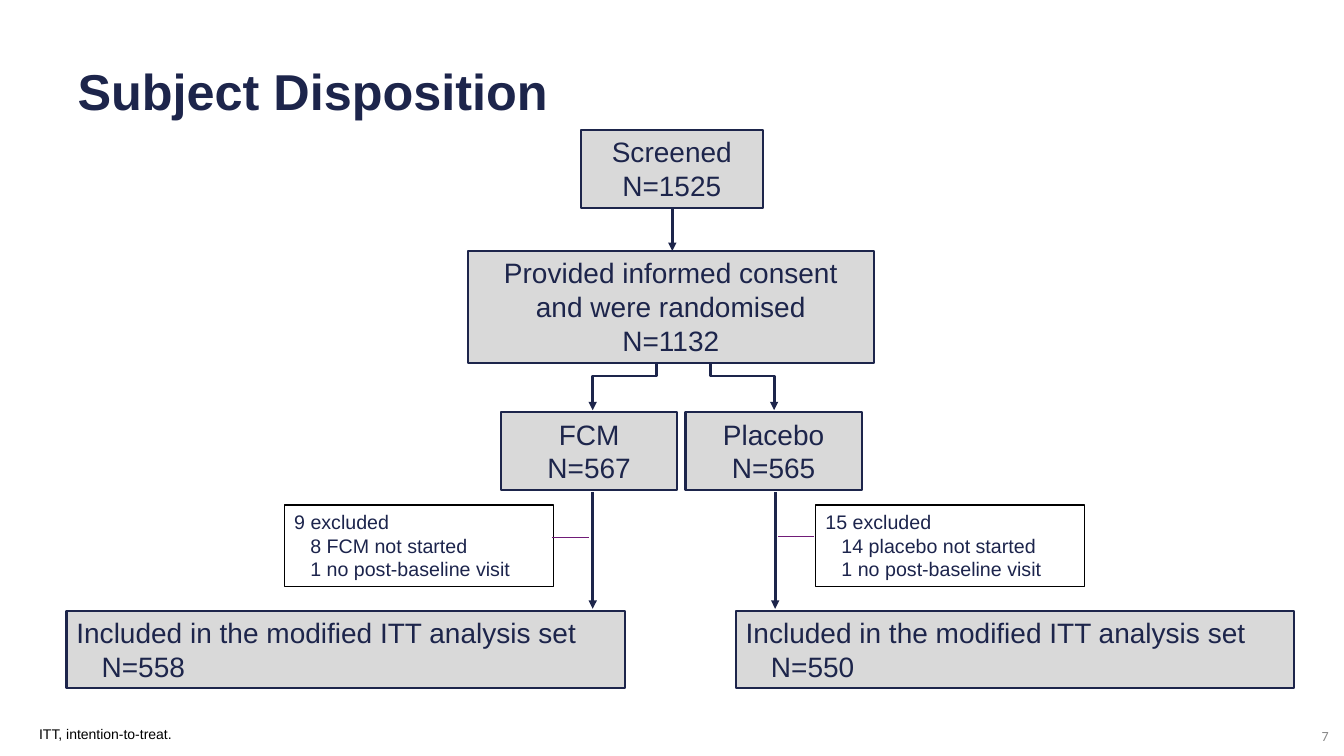
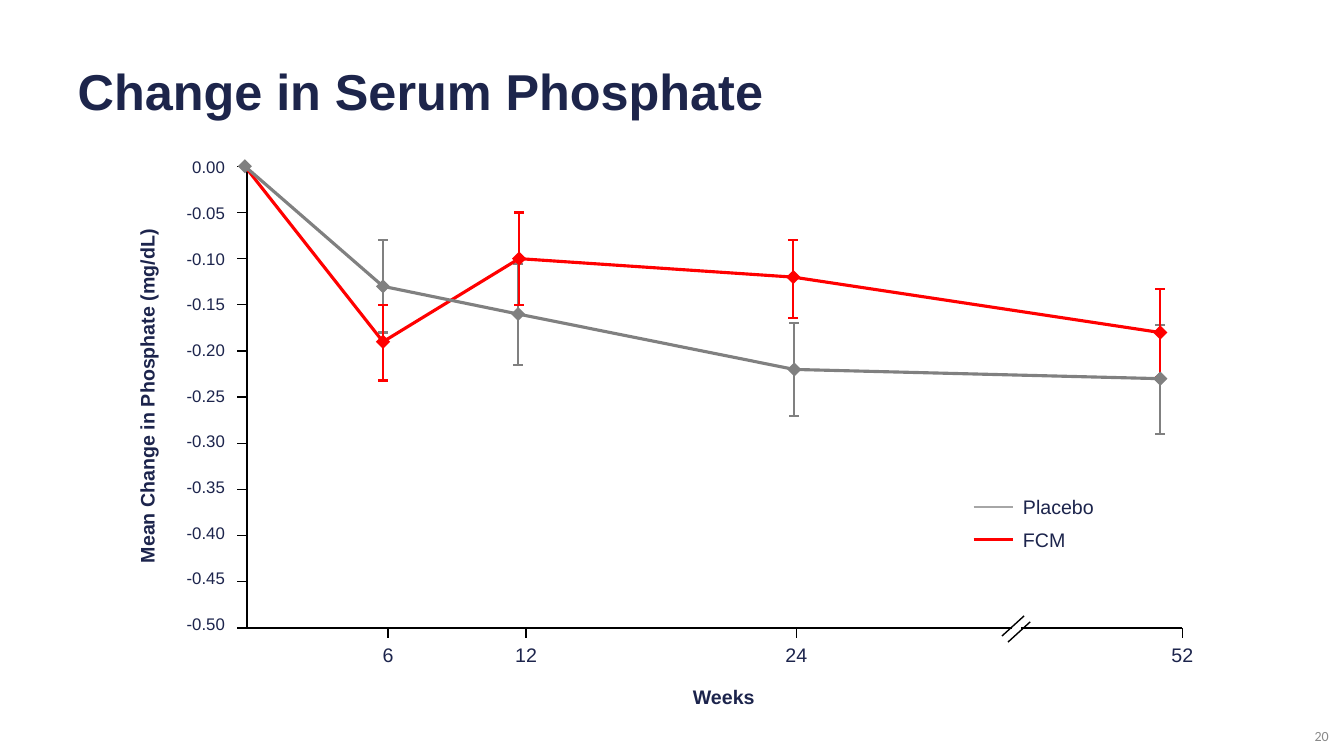
from dataclasses import dataclass

from lxml import etree
from pptx import Presentation
from pptx import util as u
from pptx.dml.color import RGBColor
from pptx.enum import shapes, text
from pptx.oxml.ns import qn

# The slide is a grid of square cells, 0.1 inch each; all places are in cells.
CELL = u.Inches(0.1)
COLUMNS, ROWS = 133.33, 75

NAVY, INK, BLACK, WHITE = "1D254B", "1C244C", "000000", "FFFFFF"
PANEL, PURPLE, MUTED = "D9D9D9", "701C77", "898989"
GREY, LIGHT_GREY, RED = "808080", "A6A6A6", "FF0000"

LEFT, CENTER, RIGHT = text.PP_ALIGN.LEFT, text.PP_ALIGN.CENTER, text.PP_ALIGN.RIGHT
TOP, MIDDLE, BOTTOM = text.MSO_ANCHOR.TOP, text.MSO_ANCHOR.MIDDLE, text.MSO_ANCHOR.BOTTOM
RECTANGLE, DIAMOND = shapes.MSO_SHAPE.RECTANGLE, shapes.MSO_SHAPE.DIAMOND

Point = tuple[float, float]


@dataclass(frozen=True)
class Area:
    left: float
    top: float
    width: float
    height: float

    def emu(self) -> list[int]:
        return [cells(n) for n in (self.left, self.top, self.width, self.height)]


@dataclass(frozen=True)
class FlowBox:
    words: str
    area: Area
    align: int = CENTER
    indent: float = 0
    size: float = 20
    color: str = NAVY
    fill: str | None = PANEL
    line: str = NAVY
    line_width: float = 1.5


@dataclass(frozen=True)
class Arrow:
    points: list[Point]


@dataclass(frozen=True)
class Reading:
    """Mean with its error limits, in hundredths of mg/dL, at a column."""
    column: float
    mean: float
    high: float
    low: float


@dataclass(frozen=True)
class Series:
    name: str
    color: str
    legend_color: str
    legend_row: float
    readings: list[Reading]


def cells(count: float) -> int:
    return round(count * CELL)


def rgb(color: str) -> RGBColor:
    return RGBColor.from_string(color)


def write(frame, words: str, *, size: float, color: str, font: str = "Arial",
          bold: bool = False, align=LEFT, anchor=TOP, indent: float = 0) -> None:
    """Fill a text frame; indent moves every paragraph after the first."""
    frame.word_wrap = True
    frame.vertical_anchor = anchor
    for index, line in enumerate(words.split("\n")):
        para = frame.add_paragraph() if index else frame.paragraphs[0]
        para.text = line
        para.alignment = align
        if index and indent:
            para._p.get_or_add_pPr().set("marL", str(cells(indent)))
        for span in para.runs:
            span.font.name, span.font.size = font, u.Pt(size)
            span.font.bold, span.font.color.rgb = bold, rgb(color)


def add_text(page, words: str, area: Area, *, rotation: float = 0, **style) -> None:
    box = page.shapes.add_textbox(*area.emu())
    box.rotation = rotation
    write(box.text_frame, words, **style)


def add_shape(page, kind, area: Area, fill: str | None, line: str | None = None,
              line_width: float = 1):
    shape = page.shapes.add_shape(kind, *area.emu())
    shape.shadow.inherit = False
    if fill:
        shape.fill.solid()
        shape.fill.fore_color.rgb = rgb(fill)
    else:
        shape.fill.background()
    if line:
        shape.line.color.rgb = rgb(line)
        shape.line.width = u.Pt(line_width)
    else:
        shape.line.fill.background()
    return shape


def add_path(page, points: list[Point], color: str, width: float, arrow: bool = False) -> None:
    """Draw a connector through two points, or an open outline through more."""
    corners = [(cells(x), cells(y)) for x, y in points]
    if len(corners) == 2:
        path = page.shapes.add_connector(shapes.MSO_CONNECTOR.STRAIGHT, *corners[0], *corners[1])
    else:
        builder = page.shapes.build_freeform(*corners[0], scale=1.0)
        builder.add_line_segments(corners[1:], close=False)
        path = builder.convert_to_shape()
        path.fill.background()
    path.line.color.rgb = rgb(color)
    path.line.width = u.Pt(width)
    if arrow:
        etree.SubElement(path.line._get_or_add_ln(), qn("a:tailEnd"), type="triangle")
    etree.SubElement(path._element.spPr, qn("a:effectLst"))


def add_page(deck, title: str, number: int):
    page = deck.slides.add_slide(deck.slide_layouts[5])
    heading = page.shapes.title
    heading.left, heading.top, heading.width, heading.height = Area(6.7, 5.2, 120, 7.5).emu()
    write(heading.text_frame, title, size=36, color=NAVY, bold=True, anchor=MIDDLE)
    add_text(page, str(number), Area(120.5, 71.8, 12.3, 2.5), size=10, color=MUTED,
             font="Calibri", align=RIGHT, anchor=MIDDLE)
    return page


# Subject disposition
def included(left: float, count: int) -> FlowBox:
    return FlowBox(f"Included in the modified ITT analysis set\nN={count}",
                   Area(left, 60.6, 55.4, 7.7), align=LEFT, indent=2.5)


def excluded(left: float, words: str) -> FlowBox:
    return FlowBox(words, Area(left, 50.1, 26.7, 8.1), align=LEFT, indent=1.6, size=14,
                   color=INK, fill=None, line=BLACK, line_width=0.75)


FLOW_BOXES = [
    FlowBox("Screened\vN=1525", Area(57.6, 12.9, 18.1, 7.7)),
    FlowBox("Provided informed consent and were randomised\vN=1132", Area(46.4, 24.9, 40.3, 11.1)),
    FlowBox("FCM\vN=567", Area(49.7, 40.9, 17.5, 7.7)),
    FlowBox("Placebo\vN=565", Area(68, 40.9, 17.5, 7.7)),
    included(6.6, 558),
    included(73, 550),
    excluded(28.2, "9 excluded\n8 FCM not started\n1 no post-baseline visit"),
    excluded(80.9, "15 excluded\n14 placebo not started\n1 no post-baseline visit"),
]
ARROWS = [
    Arrow([(66.7, 20.7), (66.7, 24.9)]),
    Arrow([(65.1, 34), (65.1, 37.3), (58.8, 37.3), (58.8, 40.7)]),
    Arrow([(70.5, 34), (70.5, 37.3), (76.8, 37.3), (76.8, 40.7)]),
    Arrow([(58.8, 48.8), (58.8, 60.4)]),
    Arrow([(76.9, 48.8), (76.9, 60.4)]),
]


def build_disposition(deck) -> None:
    page = add_page(deck, "Subject Disposition", 7)
    for arrow in ARROWS:
        add_path(page, arrow.points, NAVY, 2, arrow=True)
    for item in FLOW_BOXES:
        box = add_shape(page, RECTANGLE, item.area, item.fill, item.line, item.line_width)
        write(box.text_frame, item.words, size=item.size, color=item.color,
              align=item.align, anchor=TOP, indent=item.indent)
    for left, row in ((54.8, 53.3), (77.2, 53.2)):
        add_path(page, [(left, row), (left + 3.6, row)], PURPLE, 0.75)
    add_text(page, "ITT, intention-to-treat.", Area(2.9, 71.4, 82.4, 2.7), size=10,
             color=BLACK, anchor=BOTTOM)


# Change in serum phosphate
AXIS_LEFT, AXIS_RIGHT, AXIS_TOP, AXIS_BOTTOM = 24.5, 117.3, 16.5, 62.3
STEPS = 10
TICK, MARKER = 1, 1.4
WEEKS = {6: 38.5, 12: 52.2, 24: 79, 52: 117.3}
ORIGIN = Reading(24.3, 0, 0, 0)
SERIES = [
    Series("Placebo", GREY, LIGHT_GREY, 50.3, [
        Reading(38, -13, -8, -18), Reading(51.4, -16, -10.6, -21.5),
        Reading(78.8, -22, -17, -27), Reading(115.1, -23, -17.2, -29)]),
    Series("FCM", RED, RED, 53.5, [
        Reading(38, -19, -15, -23.2), Reading(51.5, -10, -5, -15),
        Reading(78.7, -12, -8, -16.4), Reading(115.1, -18, -13.3, -22.8)]),
]


def value_row(value: float) -> float:
    return AXIS_TOP - value / 50 * (AXIS_BOTTOM - AXIS_TOP)


def add_marker(page, reading: Reading, color: str) -> None:
    area = Area(reading.column - MARKER / 2, value_row(reading.mean) - MARKER / 2, MARKER, MARKER)
    add_shape(page, DIAMOND, area, color)


def add_error_bar(page, reading: Reading, color: str) -> None:
    ends = [value_row(reading.high), value_row(reading.low)]
    add_path(page, [(reading.column, row) for row in ends], color, 1.5)
    for row in ends:
        add_path(page, [(reading.column - TICK / 2, row), (reading.column + TICK / 2, row)],
                 color, 1.5)


def add_axes(page) -> None:
    add_path(page, [(AXIS_LEFT, AXIS_TOP), (AXIS_LEFT, AXIS_BOTTOM), (AXIS_RIGHT, AXIS_BOTTOM)],
             BLACK, 1)
    for step in range(STEPS + 1):
        value = -5 * step
        row = value_row(value)
        add_path(page, [(AXIS_LEFT, row), (AXIS_LEFT - TICK, row)], BLACK, 1)
        add_text(page, f"{value / 100:.2f}", Area(13.6, 15.1 + 4.53 * step, 9.7, 3),
                 size=12, color=INK, align=RIGHT)
    for week, column in WEEKS.items():
        add_path(page, [(column, AXIS_BOTTOM), (column, AXIS_BOTTOM + TICK)], BLACK, 1)
        add_text(page, str(week), Area(column - 3, 63.3, 6, 3.4), size=14, color=INK, align=CENTER)
    add_path(page, [(100.4, AXIS_BOTTOM), (101.3, AXIS_BOTTOM)], WHITE, 1)
    for left, top in ((100.2, 61.5), (100.8, 62.1)):
        add_path(page, [(left + 1.4, top - 0.4), (left - 0.8, top + 1.6)], BLACK, 1)
    add_text(page, "Mean Change in Phosphate (mg/dL)", Area(-6, 37.6, 41.2, 3.4), rotation=270,
             size=14, color=INK, bold=True, align=CENTER)
    add_text(page, "Weeks", Area(48.5, 67.5, 46.6, 3.4), size=14, color=INK, bold=True,
             align=CENTER)


def build_phosphate(deck) -> None:
    page = add_page(deck, "Change in Serum Phosphate", 20)
    add_axes(page)
    for series in SERIES:
        for reading in series.readings:
            add_error_bar(page, reading, series.color)
            add_marker(page, reading, series.color)
        add_path(page, [(96.6, series.legend_row), (100.5, series.legend_row)],
                 series.legend_color, 2)
        add_text(page, series.name, Area(100.5, series.legend_row - 1.65, 13, 3.4),
                 size=14, color=INK)
    for series in reversed(SERIES):
        line = [(reading.column, value_row(reading.mean))
                for reading in [ORIGIN, *series.readings]]
        add_path(page, line, series.color, 2.25)
    for reading in (ORIGIN, SERIES[0].readings[-1]):
        add_marker(page, reading, GREY)


def main() -> None:
    deck = Presentation()
    deck.slide_width, deck.slide_height = cells(COLUMNS), cells(ROWS)
    build_disposition(deck)
    build_phosphate(deck)
    deck.save("out.pptx")


if __name__ == "__main__":
    main()
